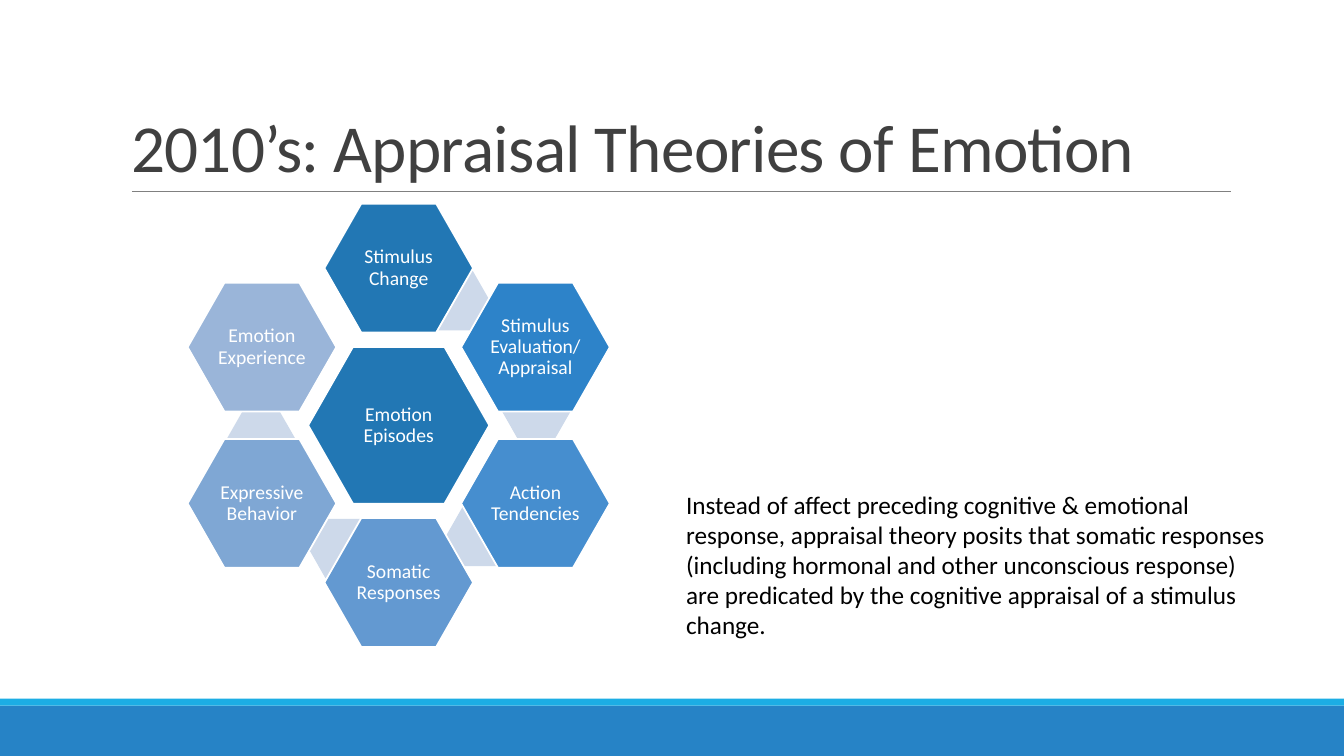
from dataclasses import dataclass

from lxml import etree
from pptx import Presentation
from pptx import util as u
from pptx.dml.color import RGBColor
from pptx.enum import shapes, text
from pptx.oxml.ns import qn


@dataclass(frozen=True)
class Theme:
    font: str = "Calibri"
    white: str = "FFFFFF"
    ink: str = "000000"
    head: str = "404040"
    rule: str = "808080"
    band: str = "2683C6"
    strip: str = "1CADE4"
    core: str = "2277B4"
    link: str = "CDD9EA"
    ring: tuple = ("2277B4", "2D83C9", "468ECF", "6399D1", "7FA7D4", "9AB5D9")
    big: int = 48
    mid: int = 18
    small: int = 14


class Deck:
    def __init__(self, theme, wide, high):
        self.theme = theme
        self.file = Presentation()
        self.file.slide_width = u.Pt(wide)
        self.file.slide_height = u.Pt(high)
        self.slide = self.file.slides.add_slide(self.file.slide_layouts[5])

    def label(self, frame, words, size, color, lines=1.0, align=text.PP_ALIGN.LEFT):
        frame.word_wrap = True
        para = frame.paragraphs[0]
        para.alignment = align
        para.line_spacing = lines
        run = para.add_run()
        run.text = words
        run.font.name = self.theme.font
        run.font.size = u.Pt(size)
        run.font.color.rgb = RGBColor.from_string(color)
        return run

    def title(self, words, x, y, w, h):
        box = self.slide.shapes.title
        box.left, box.top, box.width, box.height = map(u.Pt, (x, y, w, h))
        frame = box.text_frame
        frame.auto_size = text.MSO_AUTO_SIZE.NONE
        frame.vertical_anchor = text.MSO_ANCHOR.BOTTOM
        run = self.label(frame, words, self.theme.big, self.theme.head, 0.85)
        run.font._element.set("spc", "-50")

    def note(self, words, x, y, w, h):
        box = self.slide.shapes.add_textbox(*map(u.Pt, (x, y, w, h)))
        self.label(box.text_frame, words, self.theme.mid, self.theme.ink)
        box.text_frame.auto_size = text.MSO_AUTO_SIZE.SHAPE_TO_FIT_TEXT

    def shape(self, kind, x, y, w, h, fill):
        item = self.slide.shapes.add_shape(kind, *map(u.Pt, (x, y, w, h)))
        item.shadow.inherit = False
        item.fill.solid()
        item.fill.fore_color.rgb = RGBColor.from_string(fill)
        item.line.fill.background()
        return item

    def bar(self, x, y, w, h, fill):
        self.shape(shapes.MSO_SHAPE.RECTANGLE, x, y, w, h, fill)

    def rule(self, x, y, end):
        line = self.slide.shapes.add_connector(
            shapes.MSO_CONNECTOR.STRAIGHT, *map(u.Pt, (x, y, end, y)))
        line.line.color.rgb = RGBColor.from_string(self.theme.rule)
        line.line.width = u.Pt(0.5)
        etree.SubElement(line._element.spPr, qn("a:effectLst"))

    def hexagon(self, x, y, w, h, fill, words=""):
        item = self.shape(shapes.MSO_SHAPE.HEXAGON, x - w / 2, y - h / 2, w, h, fill)
        item.adjustments[0] = 0.286
        item.adjustments[1] = 1.155
        if words:
            item.line.color.rgb = RGBColor.from_string(self.theme.white)
            item.line.width = u.Pt(1.25)
            frame = item.text_frame
            frame.margin_left = frame.margin_right = u.Pt(1.4)
            frame.margin_top = frame.margin_bottom = u.Pt(1.4)
            frame.vertical_anchor = text.MSO_ANCHOR.MIDDLE
            self.label(frame, words, self.theme.small, self.theme.white, 0.9,
                       text.PP_ALIGN.CENTER)


def main():
    theme = Theme()
    deck = Deck(theme, 960, 540)
    deck.bar(0, 504, 960, 36, theme.band)
    deck.bar(0, 499, 960, 5, theme.strip)
    deck.rule(94.3, 136.8, 879.1)
    deck.title("2010’s: Appraisal Theories of Emotion", 86.4, 22.3, 792, 114.5)

    mid_x, mid_y = 284.8, 303.8
    side, near, far = 97.7, 55.8, 112.3
    deck.hexagon(mid_x, mid_y, 129.4, 112, theme.core, "Emotion Episodes")

    links = ((40.7, -89), (98.3, -9.8), (58, 79.4), (-40, 88), (-98.3, 9.5))
    for dx, dy in links:
        deck.hexagon(mid_x + dx, mid_y + dy, 48.8, 42.2, theme.link)

    ring = (
        ("Stimulus Change", 0, -far),
        ("Stimulus Evaluation/ Appraisal", side, -near),
        ("Action Tendencies", side, near),
        ("Somatic Responses", 0, far),
        ("Expressive Behavior", -side, near),
        ("Emotion Experience", -side, -near),
    )
    for (words, dx, dy), fill in zip(ring, theme.ring):
        deck.hexagon(mid_x + dx, mid_y + dy, 106.2, 92, fill, words)

    deck.note(
        "Instead of affect preceding cognitive & emotional response, appraisal "
        "theory posits that somatic responses (including hormonal and other "
        "unconscious response) are predicated by the cognitive appraisal of a "
        "stimulus change.", 483, 345.6, 432.7, 116.6)
    deck.file.save("out.pptx")


if __name__ == "__main__":
    main()
